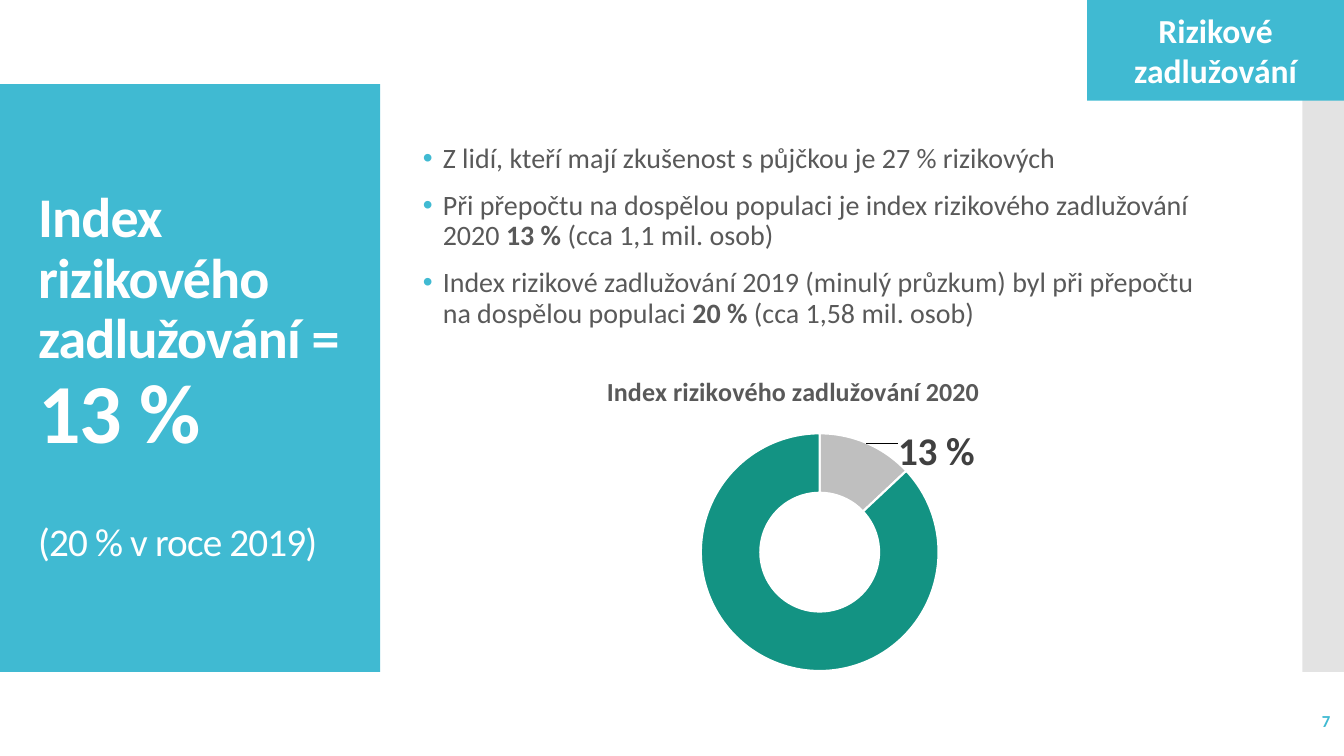
from dataclasses import dataclass

from lxml.etree import SubElement
from pptx import Presentation
from pptx.chart.data import CategoryChartData
from pptx.dml.color import RGBColor
from pptx.enum.chart import XL_CHART_TYPE
from pptx.enum.shapes import MSO_SHAPE
from pptx.enum.text import MSO_ANCHOR, PP_ALIGN
from pptx.oxml import parse_xml
from pptx.oxml.ns import nsdecls, qn
from pptx.util import Cm, Pt


@dataclass(frozen=True)
class Theme:
    font: str = "Calibri"
    accent: str = "40BAD2"
    side_bar: str = "C8C8C8"
    white: str = "FFFFFF"
    text: str = "595959"
    label: str = "404040"
    risky: str = "BFBFBF"
    others: str = "139383"
    heading: float = 40
    figure: float = 60
    note: float = 28
    corner: float = 24
    body: float = 20
    chart_title: float = 18.6
    page: float = 12


THEME = Theme()

# Runs are (text, size, bold)
TITLE = [
    [("Index rizikového zadlužování = ", THEME.heading, True), ("13 %", THEME.figure, True)],
    [("(20 % v roce 2019)", THEME.note, False)],
]
BULLETS = [
    [("Z lidí, kteří mají zkušenost s půjčkou je 27 % rizikových", THEME.body, False)],
    [("Při přepočtu na dospělou populaci je index rizikového zadlužování 2020 ", THEME.body, False),
     ("13 %", THEME.body, True), (" (cca 1,1 mil. osob)", THEME.body, False)],
    [("Index rizikové zadlužování 2019 (minulý průzkum) byl při přepočtu na dospělou populaci ",
      THEME.body, False),
     ("20 %", THEME.body, True), (" (cca 1,58 mil. osob)", THEME.body, False)],
]
CORNER = [[("Rizikové zadlužování", THEME.corner, True)]]
PAGE = [[("7", THEME.page, True)]]
CHART_TITLE = "Index rizikového zadlužování 2020"
CHART_LABEL = "13 %"
CHART_CATEGORIES = ("1", "2")
CHART_VALUES = (13, 87)

# Boxes are left, top, width, height in centimetres
SLIDE_SIZE = (33.87, 19.05)
PANEL_BOX = (0, 2.12, 9.58, 14.81)
BAR_BOX = (32.82, 2.12, 1.05, 14.81)
TITLE_BOX = (0.71, 3.12, 8.18, 12.78)
PAGE_BOX = (29.54, 17.65, 4.24, 1.02)
BODY_BOX = (10.41, 3.64, 20.32, 5.2)
CHART_BOX = (13.28, 8.76, 14.61, 8.89)
CORNER_BOX = (27.4, 0, 6.47, 2.54)


def lengths(box):
    return [Cm(value) for value in box]


def style_font(font, size, color, bold):
    font.name = THEME.font
    font.size = Pt(size)
    font.bold = bold
    font.color.rgb = RGBColor.from_string(color)


def add_panel(slide, box, color):
    shape = slide.shapes.add_shape(MSO_SHAPE.RECTANGLE, *lengths(box))
    shape.shadow.inherit = False
    shape.fill.solid()
    shape.fill.fore_color.rgb = RGBColor.from_string(color)
    shape.line.fill.background()
    return shape


def add_text_box(slide, box):
    return slide.shapes.add_textbox(*lengths(box))


def write(shape, paragraphs, color, align=PP_ALIGN.LEFT, anchor=MSO_ANCHOR.MIDDLE,
          line_spacing=None, gap=0):
    """Fill a shape with paragraphs of runs, `gap` points apart."""
    frame = shape.text_frame
    frame.word_wrap = True
    frame.vertical_anchor = anchor
    for index, runs in enumerate(paragraphs):
        paragraph = frame.add_paragraph() if index else frame.paragraphs[0]
        paragraph.alignment = align
        if line_spacing:
            paragraph.line_spacing = line_spacing
        if index and gap:
            paragraph.space_before = Pt(gap)
        for text, size, bold in runs:
            run = paragraph.add_run()
            run.text = text
            style_font(run.font, size, color, bold)
    return frame


def add_bullet(paragraph):
    properties = paragraph._p.get_or_add_pPr()
    properties.set("marL", str(Cm(0.5)))
    properties.set("indent", str(-Cm(0.5)))
    color = SubElement(properties, qn("a:buClr"))
    SubElement(color, qn("a:srgbClr"), val=THEME.accent)
    SubElement(properties, qn("a:buFont"), typeface="Arial")
    SubElement(properties, qn("a:buChar"), char="•")


def manual_layout(inner=False, edge=False, **places):
    """Chart layout in fractions of the chart: edge positions, or offsets for a label."""
    parts = ['<c:layoutTarget val="inner"/>'] if inner else []
    if inner or edge:
        parts += ['<c:xMode val="edge"/>', '<c:yMode val="edge"/>']
    parts += [f'<c:{name} val="{value}"/>' for name, value in places.items()]
    return parse_xml(f'<c:layout {nsdecls("c")}><c:manualLayout>{"".join(parts)}'
                     '</c:manualLayout></c:layout>')


def place(element, layout, after):
    """Put a layout right after the named child, replacing any present one."""
    for present in element.findall(qn("c:layout")):
        element.remove(present)
    if after:
        element.find(qn(after)).addnext(layout)
    else:
        element.insert(0, layout)


def add_index_chart(slide):
    data = CategoryChartData()
    data.categories = CHART_CATEGORIES
    data.add_series("Series 1", CHART_VALUES)
    chart = slide.shapes.add_chart(XL_CHART_TYPE.DOUGHNUT, *lengths(CHART_BOX), data).chart
    chart.has_legend = False
    chart.font.name = THEME.font
    chart.font.size = Pt(10)

    run = chart.chart_title.text_frame.paragraphs[0].add_run()
    run.text = CHART_TITLE
    style_font(run.font, THEME.chart_title, THEME.text, True)
    place(chart.chart_title._element, manual_layout(edge=True, x=0.13, y=0.06), "c:tx")
    plot_area = chart._chartSpace.chart.plotArea
    place(plot_area, manual_layout(inner=True, x=0.3, y=0.24, w=0.41, h=0.68), None)

    plot = chart.plots[0]
    plot.vary_by_categories = True
    plot._element.find(qn("c:holeSize")).set("val", "75")
    series = plot.series[0]
    for index, color in enumerate((THEME.risky, THEME.others)):
        slice_format = series.points[index].format
        slice_format.fill.solid()
        slice_format.fill.fore_color.rgb = RGBColor.from_string(color)
        slice_format.line.color.rgb = RGBColor.from_string(THEME.white)
        slice_format.line.width = Pt(1.5)

    series.data_labels.show_value = False
    label = series.points[0].data_label
    run = label.text_frame.paragraphs[0].add_run()
    run.text = CHART_LABEL
    style_font(run.font, THEME.note, THEME.label, True)
    label_element = series._element.find(qn("c:dLbls")).find(qn("c:dLbl"))
    place(label_element, manual_layout(x=0.14, y=-0.05), "c:idx")


def main():
    presentation = Presentation()
    presentation.slide_width, presentation.slide_height = lengths(SLIDE_SIZE)
    slide = presentation.slides.add_slide(presentation.slide_layouts[6])

    add_panel(slide, PANEL_BOX, THEME.accent)
    bar = add_panel(slide, BAR_BOX, THEME.side_bar)
    bar_color = bar._element.spPr.find(qn("a:solidFill")).find(qn("a:srgbClr"))
    SubElement(bar_color, qn("a:alpha"), val="50000")

    title = write(add_text_box(slide, TITLE_BOX), TITLE, THEME.white, line_spacing=0.9, gap=44)
    for paragraph in title.paragraphs:
        for run in paragraph.runs:
            run.font._element.set("spc", "-60")

    write(add_text_box(slide, PAGE_BOX), PAGE, THEME.accent, PP_ALIGN.RIGHT)

    body = write(add_text_box(slide, BODY_BOX), BULLETS, THEME.text,
                 anchor=MSO_ANCHOR.TOP, line_spacing=0.9, gap=12)
    body.margin_top = 0
    for paragraph in body.paragraphs:
        add_bullet(paragraph)

    add_index_chart(slide)
    write(add_panel(slide, CORNER_BOX, THEME.accent), CORNER, THEME.white, PP_ALIGN.CENTER)
    presentation.save("out.pptx")


if __name__ == "__main__":
    main()
